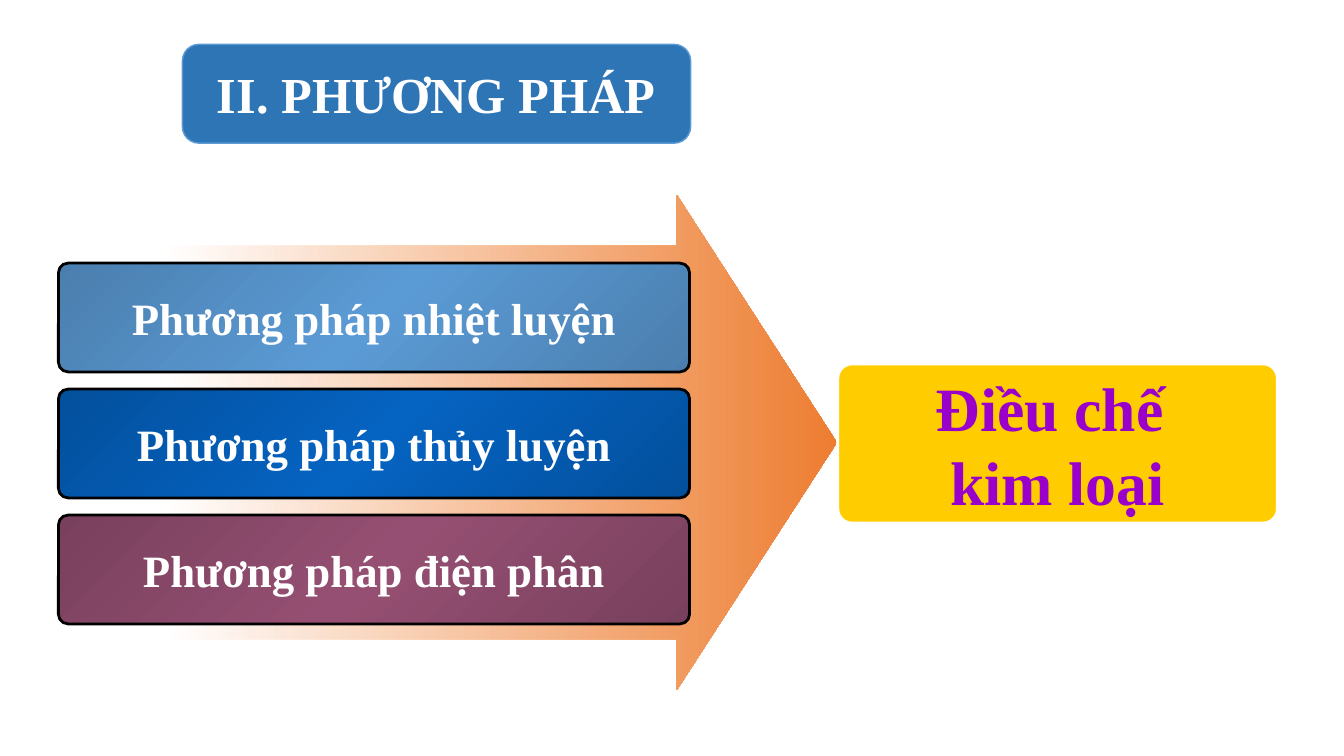
from dataclasses import dataclass

from lxml import etree
from pptx import Presentation
from pptx.dml.color import RGBColor
from pptx.enum.shapes import MSO_SHAPE
from pptx.enum.text import MSO_ANCHOR, PP_ALIGN
from pptx.oxml.ns import qn
from pptx.util import Inches, Pt

ROUNDED = MSO_SHAPE.ROUNDED_RECTANGLE
RIGHT_ARROW = MSO_SHAPE.RIGHT_ARROW
MIDDLE = MSO_ANCHOR.MIDDLE
CENTER = PP_ALIGN.CENTER


@dataclass(frozen=True)
class Theme:
    font: str = "Times New Roman"
    white: str = "FFFFFF"
    black: str = "000000"
    title_fill: str = "2E75B6"
    title_line: str = "5B9BD5"
    arrow: str = "ED7D31"
    result_fill: str = "FFCC00"
    result_text: str = "9900CC"
    bars: tuple = ("5B9BD5", "0563C1", "954F72")
    bar_shade: int = 63
    title_size: int = 36
    bar_size: int = 32
    result_size: int = 44
    corner: float = 0.09


THEME = Theme()
METHODS = ("Phương pháp nhiệt luyện", "Phương pháp thủy luyện", "Phương pháp điện phân")


def add_block(page, kind, box, adjustments=(), fill=None, line=None, line_width=1):
    """Add a shape without shadow; box is left, top, width, height in inches."""
    shape = page.shapes.add_shape(kind, *map(Inches, box))
    shape.shadow.inherit = False
    for index, value in enumerate(adjustments):
        shape.adjustments[index] = value
    if fill:
        shape.fill.solid()
        shape.fill.fore_color.rgb = RGBColor.from_string(fill)
    if line:
        shape.line.color.rgb = RGBColor.from_string(line)
        shape.line.width = Pt(line_width)
    else:
        shape.line.fill.background()
    return shape


def set_gradient(shape, stops, angle=0):
    """Fill with stops of (percent, colour, shade percent); angle is clockwise."""
    shape.fill.gradient()
    shape.fill.gradient_angle = -angle % 360
    stop_list = shape._element.spPr.find(qn("a:gradFill")).find(qn("a:gsLst"))
    for old_stop in list(stop_list):
        stop_list.remove(old_stop)
    for position, color, shade in stops:
        stop = etree.SubElement(stop_list, qn("a:gs"), pos=str(position * 1000))
        tone = etree.SubElement(stop, qn("a:srgbClr"), val=color)
        if shade < 100:
            etree.SubElement(tone, qn("a:shade"), val=str(shade * 1000))


def write_text(shape, text, size, color=THEME.white, wrap=True):
    """Write bold centred lines, one paragraph each."""
    frame = shape.text_frame
    frame.word_wrap = wrap
    frame.vertical_anchor = MIDDLE
    for index, line in enumerate(text.split("\n")):
        para = frame.add_paragraph() if index else frame.paragraphs[0]
        para.alignment = CENTER
        span = para.add_run()
        span.text = line
        span.font.name = THEME.font
        span.font.size = Pt(size)
        span.font.bold = True
        span.font.color.rgb = RGBColor.from_string(color)


def add_arrow(page, box):
    arrow = add_block(page, RIGHT_ARROW, box, (0.793, 0.323))
    set_gradient(arrow, [(0, THEME.white, 100), (100, THEME.arrow, 100)])


def add_methods(page, box, gap=0.17):
    left, top, width, height = box
    bar_height = (height - gap * (len(METHODS) - 1)) / len(METHODS)
    for index, (method, color) in enumerate(zip(METHODS, THEME.bars)):
        bar_box = (left, top + index * (bar_height + gap), width, bar_height)
        bar = add_block(page, ROUNDED, bar_box, (THEME.corner,),
                        line=THEME.black, line_width=2)
        shade = THEME.bar_shade
        set_gradient(bar, [(0, color, shade), (50, color, 100), (100, color, shade)], 45)
        write_text(bar, method, THEME.bar_size, wrap=False)


def add_result(page, box):
    result = add_block(page, ROUNDED, box, (THEME.corner,), THEME.result_fill,
                       THEME.white, 2)
    write_text(result, "Điều chế \nkim loại", THEME.result_size, THEME.result_text)


def add_title(page, box):
    title = add_block(page, ROUNDED, box, fill=THEME.title_fill, line=THEME.title_line)
    write_text(title, "II. PHƯƠNG PHÁP", THEME.title_size)


def main():
    deck = Presentation()
    deck.slide_width, deck.slide_height = Inches(13.33), Inches(7.5)
    page = deck.slides.add_slide(deck.slide_layouts[6])
    # Arrow behind the three methods, pointing at the result
    add_arrow(page, (1.61, 1.93, 6.69, 4.92))
    add_methods(page, (0.58, 2.61, 6.26, 3.58))
    add_result(page, (8.31, 3.61, 4.36, 1.58))
    # Section heading
    add_title(page, (1.81, 0.44, 5.04, 0.98))
    deck.save("out.pptx")


if __name__ == "__main__":
    main()
